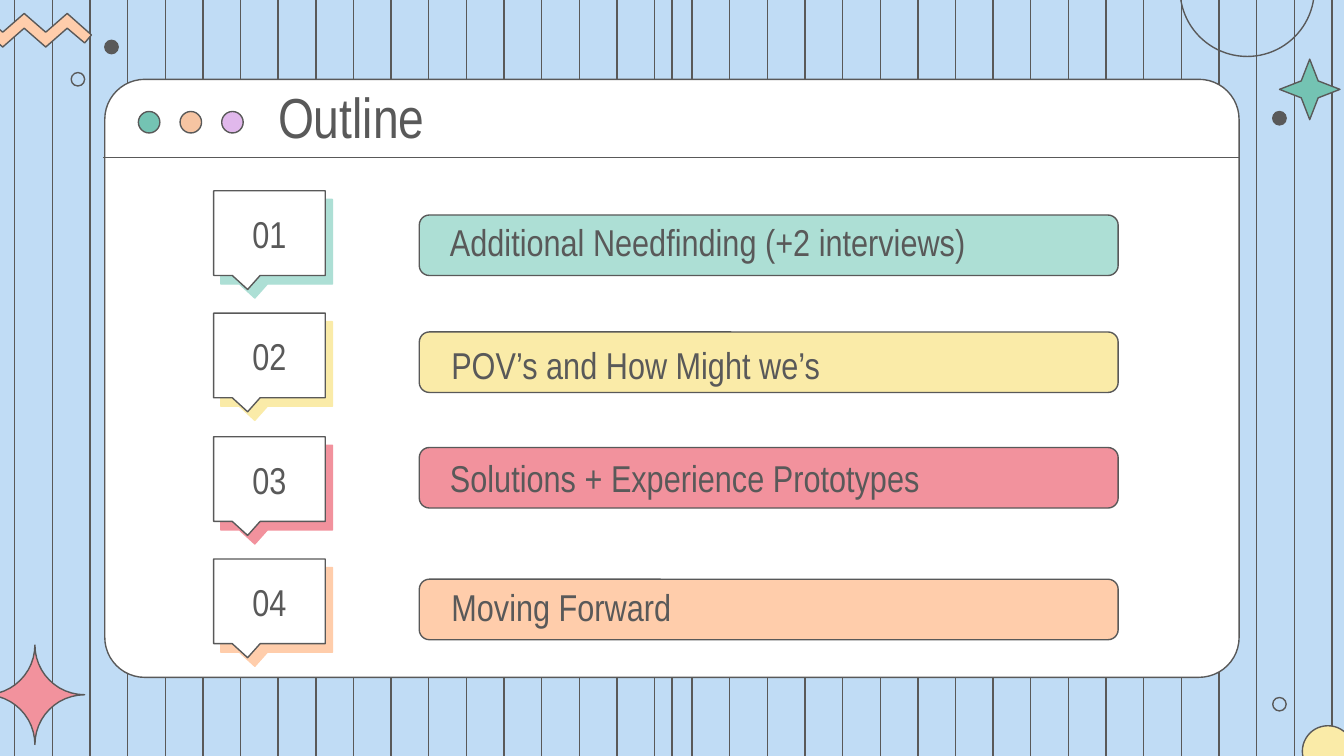
from math import cos, pi, sin

from lxml import etree
from pptx import Presentation
from pptx.dml.color import RGBColor
from pptx.enum.shapes import MSO_CONNECTOR, MSO_SHAPE
from pptx.enum.text import MSO_ANCHOR, PP_ALIGN
from pptx.oxml.ns import qn
from pptx.util import Inches, Pt

STRAIGHT = MSO_CONNECTOR.STRAIGHT
OVAL, ROUND, STAR = MSO_SHAPE.OVAL, MSO_SHAPE.ROUNDED_RECTANGLE, MSO_SHAPE.STAR_4_POINT
CALLOUT = MSO_SHAPE.ROUNDED_RECTANGULAR_CALLOUT
LEFT, CENTER, MIDDLE = PP_ALIGN.LEFT, PP_ALIGN.CENTER, MSO_ANCHOR.MIDDLE

FONT = "Arial Narrow"
INK, WHITE, SKY = "595959", "FFFFFF", "C0DCF5"
TEAL, MINT, YELLOW, CORAL, PEACH = "74C3B3", "ADDFD5", "FAEBA8", "F2929D", "FFCDAB"
W = 10
H = W * 9 / 16

# Content: text, colour, callout top, bar top, text box (left, top, width, height), line spacing
TITLE = "Outline"
ROWS = [
    ("Additional Needfinding (+2 interviews)", MINT, 1.42, 1.6, (3.25, 1.6, 4.64, 0.45), 0.8),
    ("POV’s and How Might we’s", YELLOW, 2.33, 2.47, (3.26, 2.5, 4.95, 0.42), 1.0),
    ("Solutions + Experience Prototypes", CORAL, 3.25, 3.33, (3.25, 3.33, 5.07, 0.45), 1.0),
    ("Moving Forward", PEACH, 4.16, 4.31, (3.26, 4.31, 4.95, 0.45), 0.9),
]
BUTTONS = [TEAL, "F6C4A2", "E1B8EC"]
# Decorative circles: left, top, diameter, fill
CIRCLES = [
    (8.78, -0.58, 1, None), (9.69, 5.4, 0.38, YELLOW),
    (0.78, 0.3, 0.1, INK), (0.53, 0.54, 0.1, None),
    (9.47, 5.19, 0.1, None), (9.47, 0.83, 0.1, INK),
]
ZIGZAG_START = [(-0.62, 0.24), (-0.76, 0.12), (-0.81, 0.18)]
ZIGZAG_END = [(0.63, 0.32), (0.68, 0.26)]
ZIGZAG_X = [-0.62, -0.46, -0.3, -0.14, 0.02, 0.18, 0.34, 0.5]

prs = Presentation()
prs.slide_width, prs.slide_height = Inches(W), Inches(H)
s = prs.slides.add_slide(prs.slide_layouts[6])


def rgb(color):
    return RGBColor.from_string(color)


def paint(sp, fill):
    sp.shadow.inherit = False
    if fill:
        sp.fill.solid()
        sp.fill.fore_color.rgb = rgb(fill)
    else:
        sp.fill.background()
    sp.line.color.rgb = rgb(INK)
    sp.line.width = Pt(0.75)
    return sp


def add_shape(kind, box, fill, adj=()):
    sp = s.shapes.add_shape(kind, *map(Inches, box))
    for i, value in enumerate(adj):
        sp.adjustments[i] = value
    return paint(sp, fill)


def add_outline(points, fill):
    pts = [(Inches(x), Inches(y)) for x, y in points]
    fb = s.shapes.build_freeform(*pts[0])
    fb.add_line_segments(pts[1:], close=True)
    return paint(fb.convert_to_shape(), fill)


def add_line(x1, y1, x2, y2):
    cx = s.shapes.add_connector(STRAIGHT, *map(Inches, (x1, y1, x2, y2)))
    cx.line.color.rgb = rgb(INK)
    cx.line.width = Pt(0.75)
    etree.SubElement(cx._element.spPr, qn("a:effectLst"))


def add_hard_shadow(sp, color, dist=6, angle=50):
    effects = sp._element.spPr.find(qn("a:effectLst"))
    shadow = etree.SubElement(effects, qn("a:outerShdw"), blurRad="0", dist=str(Pt(dist)),
                              dir=str(angle * 60000), algn="bl", rotWithShape="0")
    etree.SubElement(shadow, qn("a:srgbClr"), val=color)


def add_text(text, box, size=20, align=LEFT, spacing=1.0):
    tf = s.shapes.add_textbox(*map(Inches, box)).text_frame
    tf.word_wrap = True
    tf.vertical_anchor = MIDDLE
    tf.margin_left = tf.margin_right = tf.margin_top = tf.margin_bottom = Inches(0.1)
    p = tf.paragraphs[0]
    p.alignment, p.line_spacing = align, spacing
    r = p.add_run()
    r.text = text
    r.font.name, r.font.size = FONT, Pt(size)
    r.font.color.rgb = rgb(INK)


# Striped background
s.background.fill.solid()
s.background.fill.fore_color.rgb = rgb(SKY)
for x in [0.11 + 0.28 * i for i in range(36)] + [W / 2]:
    add_line(x, 0, x, H)

# Window with title bar
add_shape(ROUND, (0.78, 0.59, 8.44, 4.45), WHITE, [0.067])
add_line(0.77, 1.17, 9.22, 1.17)
for i, color in enumerate(BUTTONS):
    add_shape(OVAL, (1.03 + 0.31 * i, 0.83, 0.16, 0.16), color)
add_text(TITLE, (1.97, 0.57, 6.91, 0.58), size=30.2)

# Decorations around the window
for x, y, d, fill in CIRCLES:
    add_shape(OVAL, (x, y, d, d), fill)
lower = [(x, (0.35, 0.21)[i % 2]) for i, x in enumerate(ZIGZAG_X)]
upper = [(x, (0.24, 0.1)[i % 2]) for i, x in enumerate(ZIGZAG_X)]
add_outline(ZIGZAG_START + lower + ZIGZAG_END + upper[:0:-1], PEACH)
add_shape(STAR, (9.52, 0.44, 0.45, 0.45), TEAL, [0.198])

# Sparkle: four quarter arcs curving inwards
cx, cy, radius, steps = 0.26, 5.17, 0.37, 12
sparkle = []
for sx, sy in [(1, -1), (1, 1), (-1, 1), (-1, -1)]:
    arc = [(cx + sx * radius * (1 - cos(t)), cy + sy * radius * (1 - sin(t)))
           for t in (pi / 2 * k / steps for k in range(steps + 1))]
    sparkle += arc if sx == -sy else arc[::-1]
add_outline(sparkle, CORAL)

# Numbered rows
for n, (text, color, top, bar_top, box, spacing) in enumerate(ROWS, 1):
    callout = add_shape(CALLOUT, (1.59, top, 0.83, 0.63), WHITE, [-0.195, 0.666, 0])
    add_hard_shadow(callout, color)
    add_text(f"{n:02}", (1.67, top + 0.09, 0.67, 0.45), align=CENTER)
    add_shape(ROUND, (3.12, bar_top, 5.2, 0.45), color, [0.167])
    add_text(text, box, spacing=spacing)

prs.save("out.pptx")
